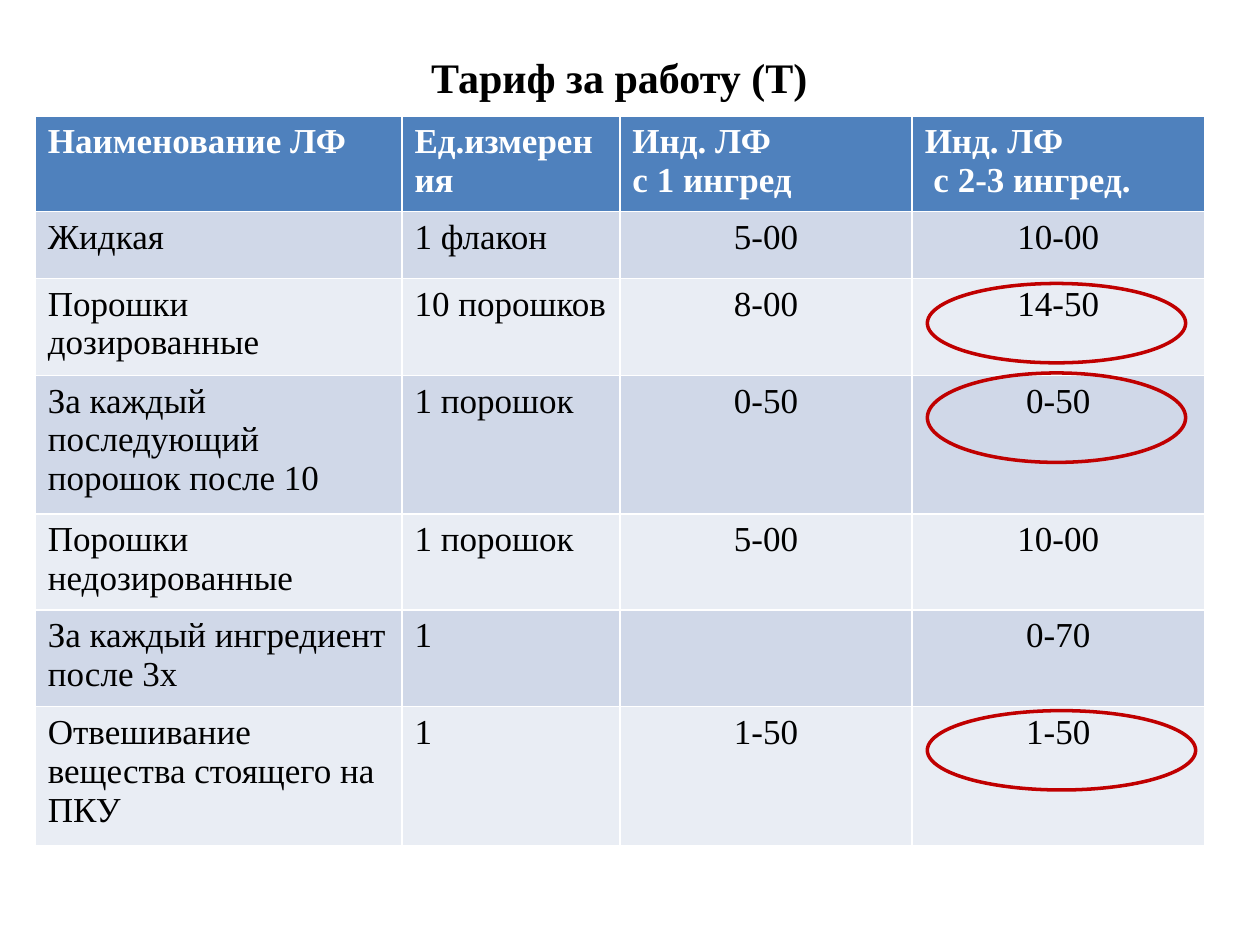
"""Build the slide with the table of work tariffs for dosage forms."""
from dataclasses import dataclass

from pptx import Presentation
from pptx.dml.color import RGBColor
from pptx.enum.shapes import MSO_SHAPE
from pptx.enum.text import MSO_ANCHOR, PP_ALIGN
from pptx.slide import Slide
from pptx.text.text import TextFrame
from pptx.util import Inches, Pt

LEFT, CENTER = PP_ALIGN.LEFT, PP_ALIGN.CENTER
BOTTOM = MSO_ANCHOR.BOTTOM
OVAL = MSO_SHAPE.OVAL
TITLE_ONLY = 5


@dataclass(frozen=True)
class Theme:
    font: str = "Times New Roman"
    title_size: Pt = Pt(24)
    table_size: Pt = Pt(20)
    mark_width: Pt = Pt(2)
    text: RGBColor = RGBColor(0, 0, 0)
    header_text: RGBColor = RGBColor(255, 255, 255)
    header_fill: RGBColor = RGBColor.from_string("4F81BD")
    bands: tuple[RGBColor, RGBColor] = (
        RGBColor.from_string("D0D8E8"),
        RGBColor.from_string("E9EDF4"),
    )
    mark: RGBColor = RGBColor.from_string("C00000")


@dataclass(frozen=True)
class TariffRow:
    height: float
    form: str
    unit: str
    single: str
    several: str

    def texts(self) -> tuple[str, ...]:
        return self.form, self.unit, self.single, self.several


@dataclass(frozen=True)
class Mark:
    top: float
    width: float
    height: float


THEME = Theme()
TITLE = "Тариф за работу (Т)"
TABLE_LEFT, TABLE_TOP = 0.28, 0.92
COLUMN_WIDTHS = (2.91, 1.73, 2.32, 2.32)
COLUMN_ALIGNS = (LEFT, LEFT, CENTER, CENTER)
ROWS = (
    TariffRow(0.76, "Наименование ЛФ", "Ед.измерения",
              "Инд. ЛФ\nс 1 ингред", "Инд. ЛФ\n с 2-3 ингред."),
    TariffRow(0.53, "Жидкая", "1 флакон", "5-00", "10-00"),
    TariffRow(0.77, "Порошки дозированные", "10 порошков", "8-00", "14-50"),
    TariffRow(1.1, "За каждый последующий порошок после 10", "1 порошок", "0-50", "0-50"),
    TariffRow(0.76, "Порошки недозированные", "1 порошок", "5-00", "10-00"),
    TariffRow(0.77, "За каждый ингредиент после 3х", "1", "", "0-70"),
    TariffRow(1.1, "Отвешивание вещества стоящего на ПКУ", "1", "1-50", "1-50"),
)
MARK_LEFT = 7.36
MARKS = (Mark(2.25, 2.05, 0.63), Mark(2.96, 2.05, 0.71), Mark(5.64, 2.13, 0.63))


def write(frame: TextFrame, text: str, size: Pt, color: RGBColor,
          bold: bool, align: PP_ALIGN) -> None:
    """Fill a text frame with evenly formatted paragraphs."""
    frame.text = text
    for para in frame.paragraphs:
        para.alignment = align
        para.font.name = THEME.font
        para.font.size = size
        para.font.bold = bold
        para.font.color.rgb = color


def add_title(page: Slide) -> None:
    """Place and format the title."""
    title = page.shapes.title
    title.left, title.top = Inches(0.35), Inches(0.36)
    title.width, title.height = Inches(9.13), Inches(0.5)
    title.text_frame.vertical_anchor = BOTTOM
    write(title.text_frame, TITLE, THEME.title_size, THEME.text, True, CENTER)


def add_tariffs(page: Slide) -> None:
    """Draw the tariff table with a header and banded rows."""
    table = page.shapes.add_table(
        len(ROWS), len(COLUMN_WIDTHS), Inches(TABLE_LEFT), Inches(TABLE_TOP),
        Inches(sum(COLUMN_WIDTHS)), Inches(sum(row.height for row in ROWS)),
    ).table
    for column, width in zip(table.columns, COLUMN_WIDTHS):
        column.width = Inches(width)
    for index, row in enumerate(ROWS):
        header = index == 0
        table.rows[index].height = Inches(row.height)
        fill = THEME.header_fill if header else THEME.bands[(index - 1) % 2]
        color = THEME.header_text if header else THEME.text
        for cell, text, align in zip(table.rows[index].cells, row.texts(), COLUMN_ALIGNS):
            cell.fill.solid()
            cell.fill.fore_color.rgb = fill
            write(cell.text_frame, text, THEME.table_size, color, header,
                  LEFT if header else align)


def add_mark(page: Slide, mark: Mark) -> None:
    """Circle a tariff in the last column."""
    oval = page.shapes.add_shape(OVAL, Inches(MARK_LEFT), Inches(mark.top),
                                 Inches(mark.width), Inches(mark.height))
    oval.shadow.inherit = False
    oval.fill.background()
    oval.line.color.rgb = THEME.mark
    oval.line.width = THEME.mark_width


def main() -> None:
    """Build and save the deck."""
    deck = Presentation()
    deck.slide_width, deck.slide_height = Inches(10), Inches(7.5)
    page = deck.slides.add_slide(deck.slide_layouts[TITLE_ONLY])
    add_title(page)
    add_tariffs(page)
    for mark in MARKS:
        add_mark(page, mark)
    deck.save("out.pptx")


if __name__ == "__main__":
    main()
